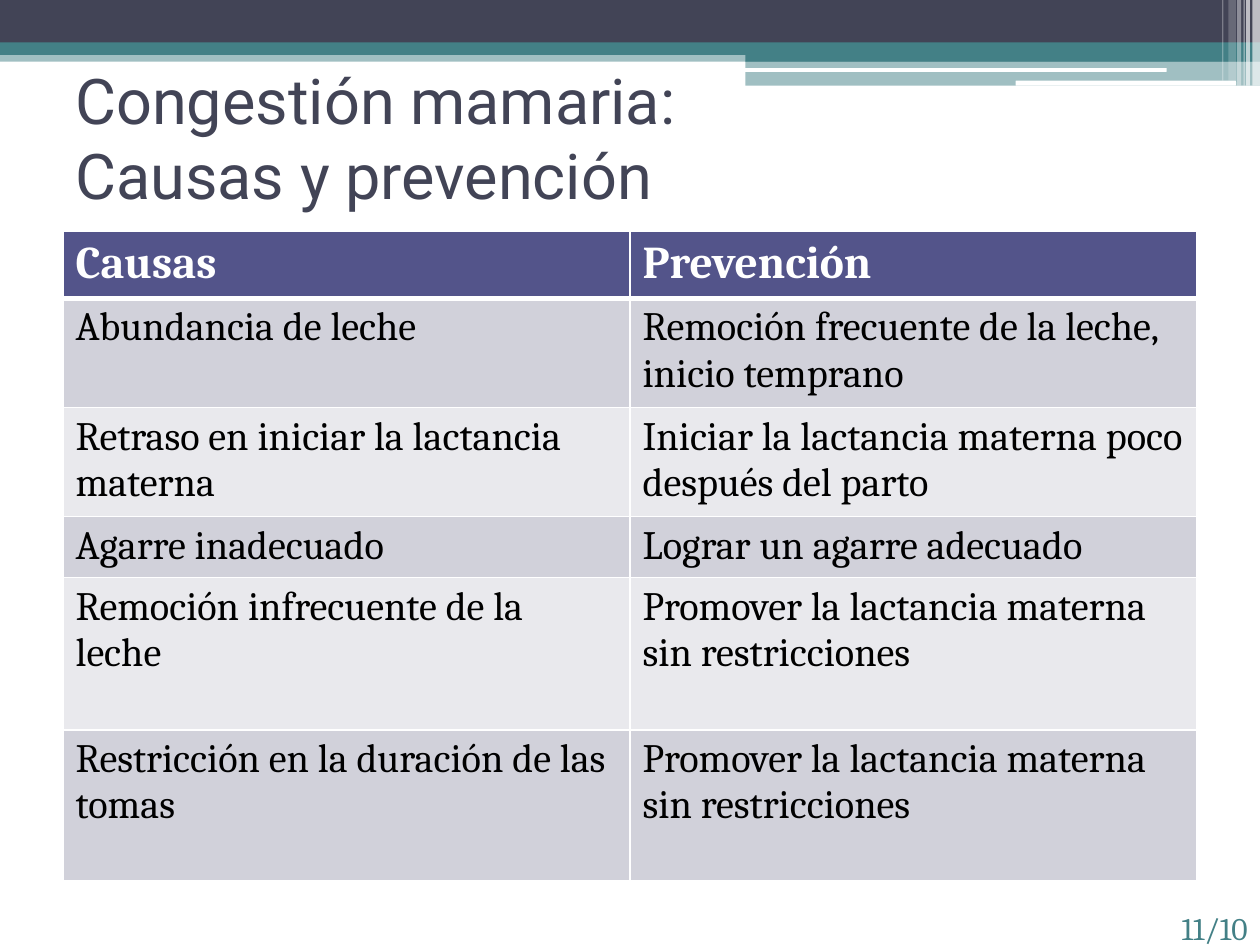
from lxml.etree import SubElement
from pptx import Presentation
from pptx.dml.color import RGBColor
from pptx.enum.shapes import MSO_SHAPE
from pptx.enum.text import MSO_ANCHOR, PP_ALIGN
from pptx.oxml.ns import qn
from pptx.util import Pt

COLORS = {
    "navy": "424456", "teal": "438086", "white": "FFFFFF", "black": "000000",
    "header": "53548A", "odd_row": "D1D1DA", "even_row": "E9E9ED",
}
ROWS = [
    ("Causas", "Prevención"),
    ("Abundancia de leche", "Remoción frecuente de la leche, inicio temprano"),
    ("Retraso en iniciar la lactancia materna",
     "Iniciar la lactancia materna poco después del parto"),
    ("Agarre inadecuado", "Lograr un agarre adecuado"),
    ("Remoción infrecuente de la leche",
     "Promover la lactancia materna sin restricciones"),
    ("Restricción en la duración de las tomas",
     "Promover la lactancia materna sin restricciones"),
]
ROW_HEIGHTS = [36.5, 60.5, 60, 33.5, 87, 86.5]


def rgb(name):
    """Return the named colour."""
    return RGBColor.from_string(COLORS[name])


def write_text(frame, text, font="Cambria", size=18, color="black",
               bold=False, align=PP_ALIGN.LEFT, anchor=MSO_ANCHOR.TOP):
    """Fill a text frame with one formatted paragraph."""
    frame.word_wrap = True
    frame.vertical_anchor = anchor
    frame.text = text
    para = frame.paragraphs[0]
    para.alignment = align
    for span in para.runs:
        span.font.name = font
        span.font.size = Pt(size)
        span.font.bold = bold
        span.font.color.rgb = rgb(color)


def add_text(page, box, text, **style):
    """Add a text box with formatted text."""
    shape = page.shapes.add_textbox(*map(Pt, box))
    write_text(shape.text_frame, text, **style)


def add_bar(page, box, color, opacity=100, kind=MSO_SHAPE.RECTANGLE):
    """Add a borderless bar with the given opacity in percent."""
    bar = page.shapes.add_shape(kind, *map(Pt, box))
    bar.shadow.inherit = False
    bar.line.fill.background()
    bar.fill.solid()
    bar.fill.fore_color.rgb = rgb(color)
    if opacity < 100:
        tint = bar.fill._xPr.find(".//" + qn("a:srgbClr"))
        SubElement(tint, qn("a:alpha"), val=str(opacity * 1000))


def add_banner(page, box):
    """Draw the layered bars and the fading stripes at the top."""
    left, top, width, height = box
    right = left + width
    step = left + 426
    add_bar(page, (left, top + 28.8, width, 6.5), "teal", 50)
    add_bar(page, (left, top, width, 24.5), "navy")
    add_bar(page, (left, top + 24.2, width, 7.2), "teal")
    add_bar(page, (step, top + 28, right - step, 7.2), "teal")
    add_bar(page, (step, top + 34.6, right - step, height - 34.6), "teal", 50)
    for offset, drop, length, thickness in [(425.5, 38.9, 241.2, 2.2),
                                            (580.3, 46.1, 126, 2.9)]:
        add_bar(page, (left + offset, top + drop, length, thickness),
                "white", kind=MSO_SHAPE.ROUNDED_RECTANGLE)
    for inset, thickness, length, opacity in [
            (4.3, 4.3, height, 65), (7.9, 2.2, height, 65),
            (9.4, 0.7, height, 60), (13, 2.2, height, 40),
            (18, 4.3, height - 2.9, 20), (21.6, 0.7, height - 2.9, 30)]:
        add_bar(page, (right - inset, top, thickness, length), "white", opacity)


def add_borders(cell, bottom):
    """Give a cell white borders with the given bottom width."""
    properties = cell._tc.get_or_add_tcPr()
    for position, side in enumerate("LRTB"):
        weight = bottom if side == "B" else 1
        line = SubElement(properties, qn("a:ln" + side), w=str(Pt(weight)))
        fill = SubElement(line, qn("a:solidFill"))
        SubElement(fill, qn("a:srgbClr"), val=COLORS["white"])
        properties.insert(position, line)


def add_comparison(page, box):
    """Add the table of causes and prevention."""
    table = page.shapes.add_table(len(ROWS), 2, *map(Pt, box)).table
    for column in table.columns:
        column.width = Pt(box[2] / 2)
    for index, texts in enumerate(ROWS):
        is_header = index == 0
        table.rows[index].height = Pt(ROW_HEIGHTS[index])
        band = "header" if is_header else ("even_row", "odd_row")[index % 2]
        for cell, text in zip(table.rows[index].cells, texts):
            cell.fill.solid()
            cell.fill.fore_color.rgb = rgb(band)
            add_borders(cell, 3 if is_header else 1)
            write_text(cell.text_frame, text, size=26 if is_header else 23,
                       color="white" if is_header else "black", bold=is_header)


def main():
    """Build and save the slide."""
    deck = Presentation()
    deck.slide_width, deck.slide_height = Pt(720), Pt(540)
    page = deck.slides.add_slide(deck.slide_layouts[6])
    add_banner(page, (0, 0, 720, 49))
    add_text(page, (36, 36, 648, 84.2),
             "Congestión mamaria: \vCausas y prevención", font="Roboto",
             size=36, color="navy", anchor=MSO_ANCHOR.MIDDLE)
    add_comparison(page, (36, 132, 648, sum(ROW_HEIGHTS)))
    add_text(page, (617.8, 516.2, 102.2, 23.8), "11/10", color="teal",
             align=PP_ALIGN.RIGHT)
    deck.save("out.pptx")


if __name__ == "__main__":
    main()
